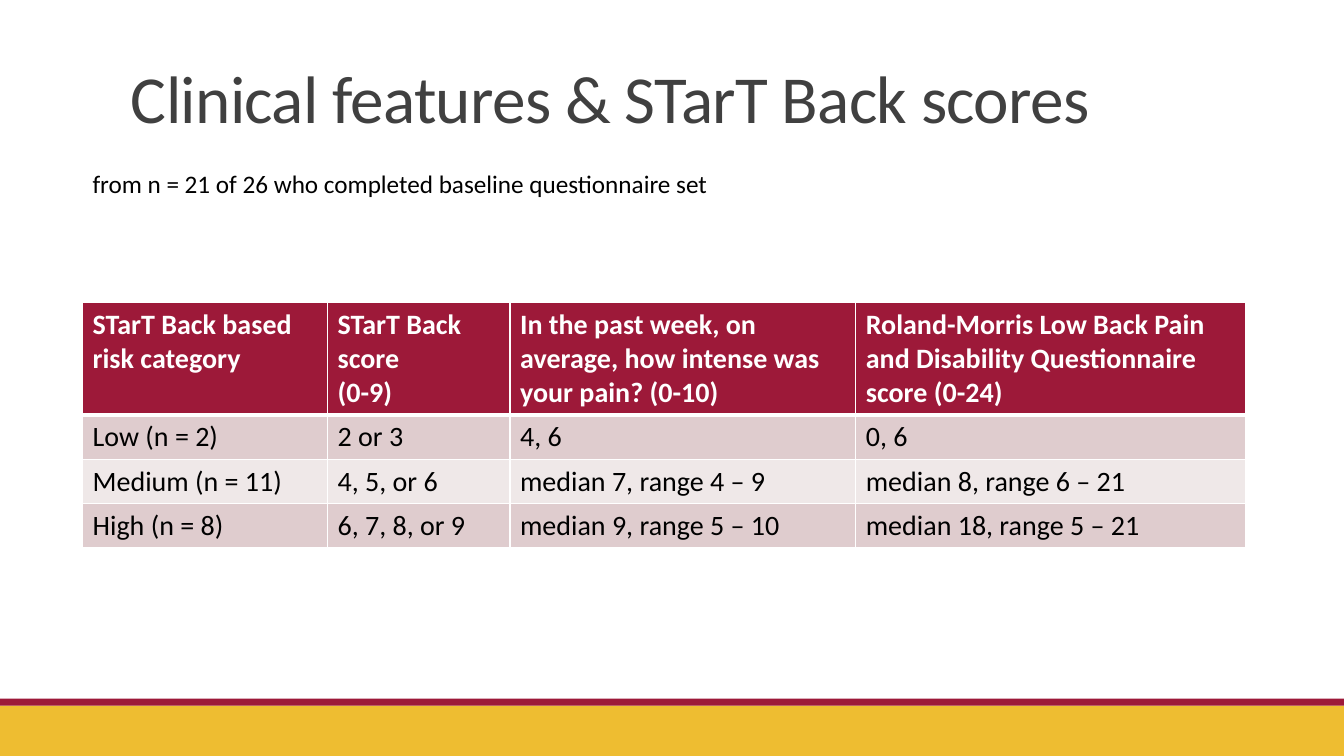
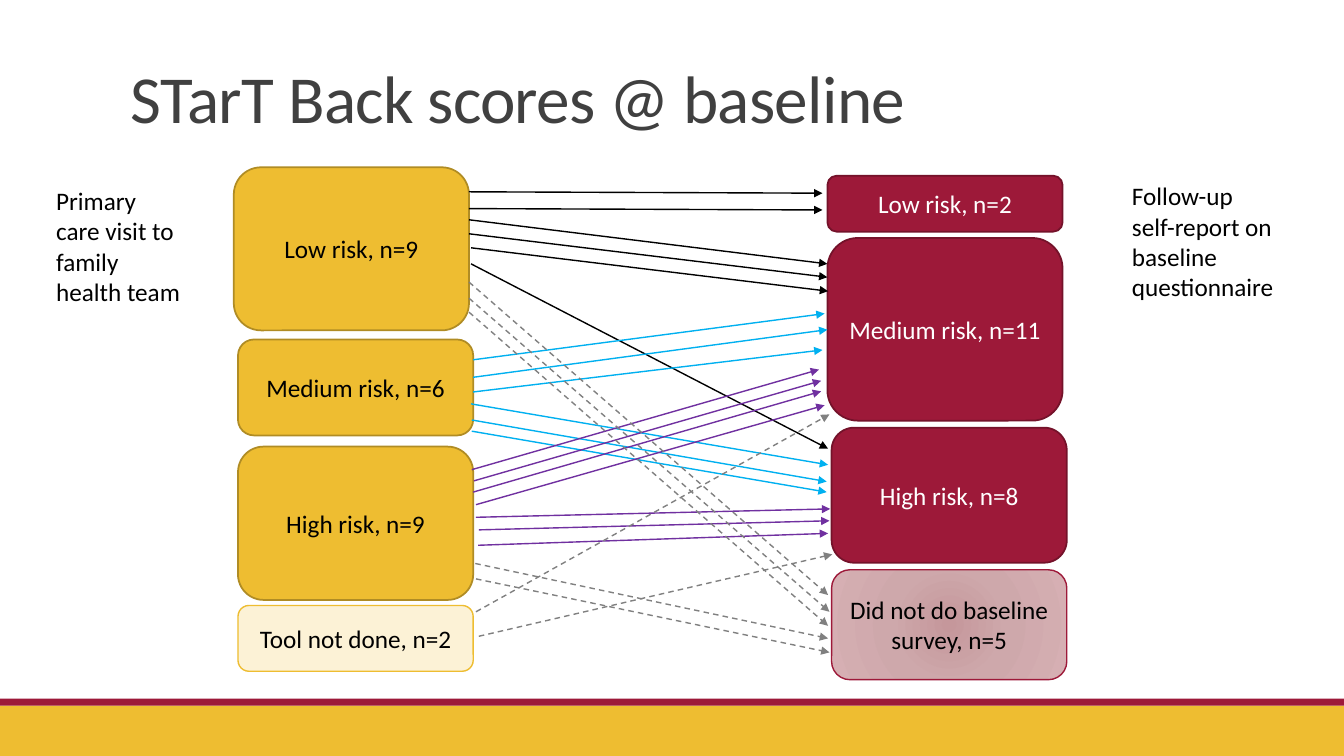
from collections import namedtuple
from dataclasses import dataclass

from lxml.etree import SubElement
from pptx import Presentation
from pptx.dml.color import RGBColor
from pptx.enum.dml import MSO_LINE
from pptx.enum.shapes import MSO_CONNECTOR, MSO_SHAPE
from pptx.enum.text import MSO_ANCHOR, PP_ALIGN
from pptx.oxml.ns import qn
from pptx.util import Pt

Box = namedtuple("Box", "left top width height")
Node = namedtuple("Node", "text left top height style")
Style = namedtuple("Style", "fill line line_width text")
# Arrows are (start offset, start y, end offset, end y); the offsets
# count from the left and right edges of the gap between the columns.
Flow = namedtuple("Flow", "color dashed arrows")


@dataclass(frozen=True)
class Theme:
    font: str = "Calibri"
    title_size: int = 48
    table_size: int = 20
    body_size: int = 18
    gold: str = "EEBD31"
    gold_edge: str = "B08C24"
    pale_gold: str = "FCF2D6"
    maroon: str = "9D1939"
    maroon_edge: str = "74122A"
    title: str = "404040"
    black: str = "000000"
    white: str = "FFFFFF"
    row_fills: tuple = ("DFCCCE", "EFE8E8")
    rose_stops: tuple = ((0, "C5979B"), (45, "CEA8AB"), (100, "D6AFB3"))
    blue: str = "00B0F0"
    purple: str = "7030A0"
    grey: str = "808080"


THEME = Theme()
PAGE = Box(0, 0, 960, 540)

HEADER = [
    "STarT Back based risk category",
    "STarT Back score\n(0-9)",
    "In the past week, on average, how intense was your pain? (0-10)",
    "Roland-Morris Low Back Pain and Disability Questionnaire score (0-24)",
]
SCORES = [
    ["Low (n = 2)", "2 or 3", "4, 6", "0, 6"],
    ["Medium (n = 11)", "4, 5, or 6", "median 7, range 4 – 9", "median 8, range 6 – 21"],
    ["High (n = 8)", "6, 7, 8, or 9", "median 9, range 5 – 10", "median 18, range 5 – 21"],
]
COLUMN_SHARES = [2.43, 1.81, 3.43, 3.87]

VISIT = Style(THEME.gold, THEME.gold_edge, 1.25, THEME.black)
SURVEY = Style(THEME.maroon, THEME.maroon_edge, 1.25, THEME.white)
NO_TOOL = Style(THEME.pale_gold, THEME.gold, 1, THEME.black)
NO_SURVEY = Style(THEME.rose_stops, THEME.maroon, 1, THEME.black)

NODE_WIDTH = 168
GAP_START, GAP_END = 168, 424
NODES = [
    Node("Low risk, n=9", 0, 0, 116.5, VISIT),
    Node("Medium risk, n=6", 3, 123, 68.5, VISIT),
    Node("High risk, n=9", 3, 199.5, 109.5, VISIT),
    Node("Tool not done, n=2", 3, 313, 47, NO_TOOL),
    Node("Low risk, n=2", 424, 6, 40, SURVEY),
    Node("Medium risk, n=11", 424, 50.5, 130.5, SURVEY),
    Node("High risk, n=8", 427, 186, 96.5, SURVEY),
    Node("Did not do baseline survey, n=5", 427, 287.5, 78.5, NO_SURVEY),
]
FLOWS = [
    Flow(THEME.black, False, [
        (0, 17.5, -3.5, 18.5), (0, 29.5, -3.5, 30.5), (0, 37.5, 0, 69),
        (0, 47.5, 0, 78.5), (1.5, 57.5, 0.5, 88.5), (1.5, 69, 0.5, 201),
    ]),
    Flow(THEME.blue, False, [
        (3, 137.5, -2, 104.5), (3, 150, 0, 116), (3, 160.5, -3.5, 130.5),
        (1.5, 169, 0.5, 212.5), (2, 180.5, -0.5, 224.5), (2, 188.5, -0.5, 232),
    ]),
    Flow(THEME.purple, False, [
        (2, 216, -6, 144.5), (3.5, 224, -4.5, 152.5), (3, 232, -4.5, 160),
        (5, 241, -2, 170), (5, 250, 2, 244), (7, 259, 1.5, 252.5),
        (6.5, 270, 0.5, 261.5),
    ]),
    Flow(THEME.grey, True, [
        (0, 82, 0.5, 305.5), (0, 93.5, 1.5, 317.5), (0, 103.5, 0.5, 327.5),
        (4.5, 283, 0.5, 336.5), (5, 294, 1.5, 346.5),
        (7, 335, 3.5, 276.5), (5, 317.5, 1.5, 176.5),
    ]),
]


def rgb(color):
    return RGBColor.from_string(color)


def points(*lengths):
    return [Pt(length) for length in lengths]


def write_text(frame, text, size, color, bold=False, align=PP_ALIGN.LEFT):
    frame.text = text
    frame.word_wrap = True
    for paragraph in frame.paragraphs:
        paragraph.alignment = align
        font = paragraph.font
        font.name, font.size, font.bold = THEME.font, Pt(size), bold
        font.color.rgb = rgb(color)


def add_label(slide, box, text, size=THEME.body_size, color=THEME.black):
    frame = slide.shapes.add_textbox(*points(*box)).text_frame
    write_text(frame, text, size, color)
    return frame


def add_title(slide, box, text):
    frame = add_label(slide, box, text, THEME.title_size, THEME.title)
    frame.vertical_anchor = MSO_ANCHOR.BOTTOM
    paragraph = frame.paragraphs[0]
    paragraph.line_spacing = 0.85
    paragraph.runs[0].font._element.set("spc", "-50")


def add_footer_bands(slide, page):
    for top, height, color in ((504, 36, THEME.gold), (499, 5, THEME.maroon)):
        band = slide.shapes.add_shape(
            MSO_SHAPE.RECTANGLE,
            *points(page.left, page.top + top, page.width, height))
        band.shadow.inherit = False
        band.fill.solid()
        band.fill.fore_color.rgb = rgb(color)
        band.line.fill.background()


def add_page(presentation, title):
    slide = presentation.slides.add_slide(presentation.slide_layouts[6])
    add_footer_bands(slide, PAGE)
    add_title(slide, Box(86.5, 22.5, 792, 79), title)
    return slide


# Score table
def set_borders(cell, bottom):
    properties = cell._tc.get_or_add_tcPr()
    for side, width in (("L", 1), ("R", 1), ("T", 1), ("B", bottom)):
        line = SubElement(properties, qn(f"a:ln{side}"), w=str(Pt(width)))
        SubElement(SubElement(line, qn("a:solidFill")), qn("a:srgbClr"),
                   val=THEME.white)


def add_score_table(slide, box):
    rows = [HEADER] + SCORES
    table = slide.shapes.add_table(
        len(rows), len(HEADER), *points(*box)).table
    for column, share in zip(table.columns, COLUMN_SHARES):
        column.width = Pt(round(box.width * share / sum(COLUMN_SHARES), 2))
    header_height = 80.5
    for index, texts in enumerate(rows):
        is_header = index == 0
        table.rows[index].height = Pt(
            header_height if is_header
            else round((box.height - header_height) / len(SCORES), 2))
        fill = THEME.maroon if is_header else THEME.row_fills[(index - 1) % 2]
        color = THEME.white if is_header else THEME.black
        for cell, text in zip(table.rows[index].cells, texts):
            set_borders(cell, 3 if is_header else 1)
            cell.fill.solid()
            cell.fill.fore_color.rgb = rgb(fill)
            write_text(cell.text_frame, text, THEME.table_size, color, is_header)


# Flow diagram
def fill_radial(shape, stops):
    shape.fill.gradient()
    gradient = shape._element.spPr.find(qn("a:gradFill"))
    for child in list(gradient):
        gradient.remove(child)
    stop_list = SubElement(gradient, qn("a:gsLst"))
    for position, color in stops:
        stop = SubElement(stop_list, qn("a:gs"), pos=str(position * 1000))
        SubElement(stop, qn("a:srgbClr"), val=color)
    circle = SubElement(gradient, qn("a:path"), {"path": "circle"})
    SubElement(circle, qn("a:fillToRect"),
               {side: "100000" for side in "ltrb"})


def add_node(slide, box, node):
    shape = slide.shapes.add_shape(
        MSO_SHAPE.ROUNDED_RECTANGLE,
        *points(box.left + node.left, box.top + node.top, NODE_WIDTH, node.height))
    shape.shadow.inherit = False
    style = node.style
    if isinstance(style.fill, tuple):
        fill_radial(shape, style.fill)
    else:
        shape.fill.solid()
        shape.fill.fore_color.rgb = rgb(style.fill)
    shape.line.color.rgb = rgb(style.line)
    shape.line.width = Pt(style.line_width)
    shape.text_frame.vertical_anchor = MSO_ANCHOR.MIDDLE
    write_text(shape.text_frame, node.text, THEME.body_size, style.text,
               align=PP_ALIGN.CENTER)


def add_arrow(slide, box, flow, arrow):
    start_offset, start_y, end_offset, end_y = arrow
    connector = slide.shapes.add_connector(
        MSO_CONNECTOR.STRAIGHT,
        *points(box.left + GAP_START + start_offset, box.top + start_y,
                box.left + GAP_END + end_offset, box.top + end_y))
    line = connector.line
    line.color.rgb = rgb(flow.color)
    line.width = Pt(1)
    if flow.dashed:
        line.dash_style = MSO_LINE.DASH
    SubElement(line._get_or_add_ln(), qn("a:tailEnd"), type="triangle")
    SubElement(connector._element.spPr, qn("a:effectLst"))


def add_flow_diagram(slide, box):
    for node in NODES:
        add_node(slide, box, node)
    for flow in FLOWS:
        for arrow in flow.arrows:
            add_arrow(slide, box, flow, arrow)


# Slides
def build_score_slide(presentation):
    slide = add_page(presentation, "Clinical features & STarT Back scores")
    add_score_table(slide, Box(59, 216, 831, 175.3))
    add_label(slide, Box(59, 116.5, 480, 29),
              "from n = 21 of 26 who completed baseline questionnaire set")


def build_flow_slide(presentation):
    slide = add_page(presentation, "STarT Back scores @ baseline")
    add_flow_diagram(slide, Box(167, 119.5, 595, 366))
    add_label(slide, Box(33, 129, 106.5, 94.5),
              "Primary care visit to family health team")
    add_label(slide, Box(801.5, 125.5, 119.5, 94.5),
              "Follow-up self-report on baseline questionnaire")


def main():
    presentation = Presentation()
    presentation.slide_width, presentation.slide_height = points(
        PAGE.width, PAGE.height)
    build_score_slide(presentation)
    build_flow_slide(presentation)
    presentation.save("out.pptx")


if __name__ == "__main__":
    main()
